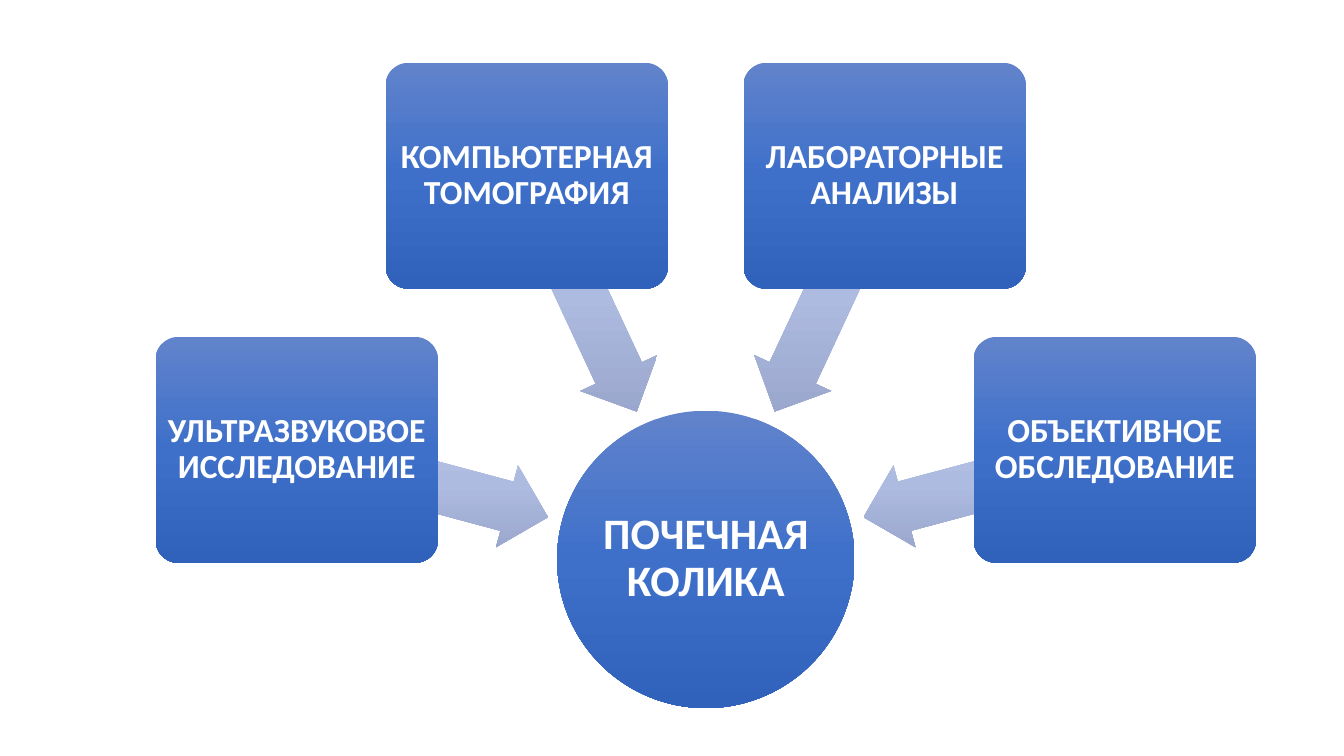
from dataclasses import dataclass
from math import cos, radians, sin

from pptx import Presentation
from pptx.dml.color import RGBColor
from pptx.enum import shapes, text
from pptx.oxml import parse_xml
from pptx.oxml.ns import nsdecls
from pptx.util import Inches, Pt


@dataclass(frozen=True)
class Theme:
    font: str = "Calibri"
    white: RGBColor = RGBColor(0xFF, 0xFF, 0xFF)
    node_fill: tuple = ("6183CB", "3E70CA", "3062BB")
    arrow_fill: tuple = ("BBC5E3", "AEBBE0", "98A4CB")
    hub_size: int = 31
    method_size: int = 24


THEME = Theme()
HUB_CENTER = (7.0, 5.55)
HUB_DIAMETER = 2.95
METHOD_SIZE = (2.8, 2.24)
METHOD_RADIUS = 4.2
ARROW_SIZE = (2.58, 0.84)
ARROW_RADIUS = 2.91
FIRST_ANGLE, ANGLE_STEP = 195, 50
METHODS = (
    "УЛЬТРАЗВУКОВОЕ ИССЛЕДОВАНИЕ",
    "КОМПЬЮТЕРНАЯ ТОМОГРАФИЯ",
    "ЛАБОРАТОРНЫЕ АНАЛИЗЫ",
    "ОБЪЕКТИВНОЕ ОБСЛЕДОВАНИЕ",
)


def around_hub(radius, angle):
    """Point at a clockwise angle, in degrees, from the hub's right side."""
    x, y = HUB_CENTER
    return x + radius * cos(radians(angle)), y + radius * sin(radians(angle))


def fill_gradient(shape, colors):
    """Vertical three-colour gradient that stays upright when the shape turns."""
    stops = "".join(
        f'<a:gs pos="{index * 50000}"><a:srgbClr val="{color}"/></a:gs>'
        for index, color in enumerate(colors)
    )
    gradient = parse_xml(
        f'<a:gradFill {nsdecls("a")} rotWithShape="0"><a:gsLst>{stops}</a:gsLst>'
        '<a:lin ang="5400000" scaled="0"/></a:gradFill>'
    )
    shape.element.spPr.prstGeom.addnext(gradient)


def add_centered_shape(page, kind, center, size, colors):
    (x, y), (width, height) = center, size
    shape = page.shapes.add_shape(
        kind, Inches(x - width / 2), Inches(y - height / 2), Inches(width), Inches(height)
    )
    shape.shadow.inherit = False
    shape.line.fill.background()
    fill_gradient(shape, colors)
    return shape


def add_label(shape, words, size, inset):
    frame = shape.text_frame
    frame.word_wrap = True
    frame.vertical_anchor = text.MSO_ANCHOR.MIDDLE
    frame.margin_left = frame.margin_right = Inches(inset)
    frame.margin_top = frame.margin_bottom = Inches(inset)
    para = frame.paragraphs[0]
    para.text = words
    para.alignment = text.PP_ALIGN.CENTER
    para.line_spacing = 0.9
    para.font.name = THEME.font
    para.font.size = Pt(size)
    para.font.bold = True
    para.font.color.rgb = THEME.white


def add_hub(page, words):
    hub = add_centered_shape(
        page, shapes.MSO_SHAPE.OVAL, HUB_CENTER, (HUB_DIAMETER, HUB_DIAMETER), THEME.node_fill
    )
    add_label(hub, words, THEME.hub_size, 0.02)


def add_arrow(page, angle):
    arrow = add_centered_shape(
        page, shapes.MSO_SHAPE.LEFT_ARROW, around_hub(ARROW_RADIUS, angle),
        ARROW_SIZE, THEME.arrow_fill,
    )
    arrow.adjustments[0] = 0.6
    arrow.adjustments[1] = 0.5
    arrow.rotation = angle


def add_method(page, words, angle):
    box = add_centered_shape(
        page, shapes.MSO_SHAPE.ROUNDED_RECTANGLE, around_hub(METHOD_RADIUS, angle),
        METHOD_SIZE, THEME.node_fill,
    )
    box.adjustments[0] = 0.1
    add_label(box, words, THEME.method_size, 0.04)


def main():
    deck = Presentation()
    deck.slide_width, deck.slide_height = Inches(13.33), Inches(7.5)
    page = deck.slides.add_slide(deck.slide_layouts[6])
    add_hub(page, "ПОЧЕЧНАЯ КОЛИКА")
    for index, words in enumerate(METHODS):
        angle = FIRST_ANGLE + index * ANGLE_STEP
        add_arrow(page, angle)
        add_method(page, words, angle)
    deck.save("out.pptx")


if __name__ == "__main__":
    main()
